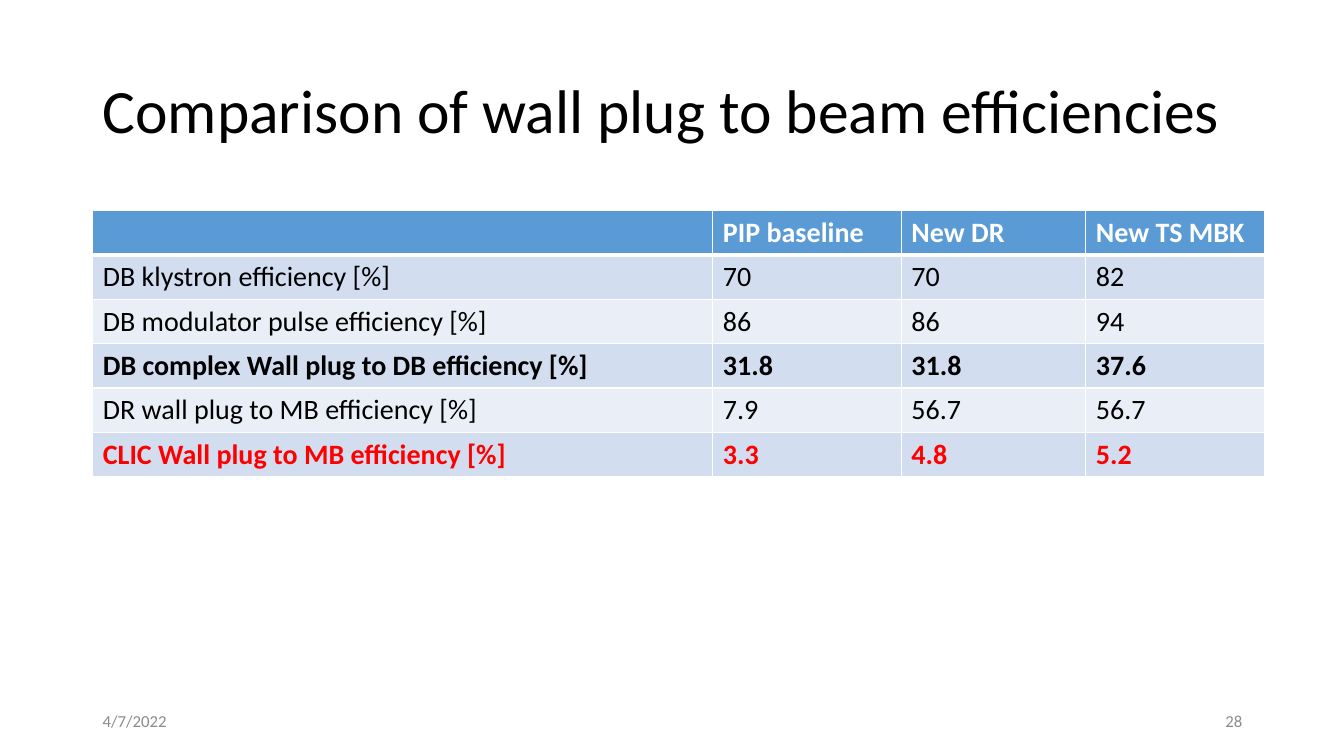
import pptx
import pptx.dml.color
import pptx.enum.text
import pptx.oxml
import pptx.oxml.ns
import pptx.util

COLOURS = {
    "black": "000000", "white": "FFFFFF", "red": "FF0000", "grey": "8C8C8C",
    "header": "5B9BD5", "band_dark": "D2DEEF", "band_light": "EAEFF7",
}
ALIGN = pptx.enum.text.PP_ALIGN
MIDDLE = pptx.enum.text.MSO_ANCHOR.MIDDLE


class SlideBuilder:
    """Holds the style and the current slide; lengths are px, 100 to the inch."""

    font = "Calibri"
    scale = 9144

    def __init__(self, page):
        self.page = page

    def emu(self, *lengths):
        return [pptx.util.Emu(length * self.scale) for length in lengths]

    def colour(self, name):
        return pptx.dml.color.RGBColor.from_string(COLOURS[name])

    def fill_text(self, frame, text, size, colour, bold=False, align=ALIGN.LEFT, spacing=1.0):
        para = frame.paragraphs[0]
        para.alignment, para.line_spacing = align, spacing
        span = para.add_run()
        span.text = text
        values = {"name": self.font, "size": pptx.util.Pt(size), "bold": bold}
        for name, value in values.items():
            setattr(span.font, name, value)
        span.font.color.rgb = self.colour(colour)

    def text(self, box, text, size, colour, **style):
        frame = self.page.shapes.add_textbox(*self.emu(*box)).text_frame
        frame.word_wrap = True
        frame.vertical_anchor = MIDDLE
        self.fill_text(frame, text, size, colour, **style)

    def borders(self, cell, widths):
        properties = cell._tc.get_or_add_tcPr()
        for position, (side, points) in enumerate(widths.items()):
            line = pptx.oxml.parse_xml(
                f'<a:ln{side} {pptx.oxml.ns.nsdecls("a")} w="{pptx.util.Pt(points)}">'
                f'<a:solidFill><a:srgbClr val="{COLOURS["white"]}"/></a:solidFill>'
                f'</a:ln{side}>')
            properties.insert(position, line)

    def table(self, left, top, column_widths, row_height, rows, row_styles):
        box = (left, top, sum(column_widths), row_height * len(rows))
        grid = self.page.shapes.add_table(
            len(rows), len(column_widths), *self.emu(*box)).table
        grid.horz_banding = False
        for column, width in zip(grid.columns, self.emu(*column_widths)):
            column.width = width
        for index, (values, style) in enumerate(zip(rows, row_styles)):
            fill, colour, bold = style
            # The rule under the header is thicker
            widths = {"L": 1, "R": 1, "T": 3 if index == 1 else 1, "B": 3 if index == 0 else 1}
            for cell, value in zip(grid.rows[index].cells, values):
                cell.fill.solid()
                cell.fill.fore_color.rgb = self.colour(fill)
                self.borders(cell, widths)
                self.fill_text(cell.text_frame, value, 20, colour, bold=bold)


def main():
    deck = pptx.Presentation()
    deck.slide_width, deck.slide_height = pptx.util.Inches(13.33), pptx.util.Inches(7.5)
    builder = SlideBuilder(deck.slides.add_slide(deck.slide_layouts[6]))

    # Title
    builder.text((92, 40, 1150, 145), "Comparison of wall plug to beam efficiencies",
                 44, "black", spacing=0.9)

    # Efficiency table
    rows = [
        ("", "PIP baseline", "New DR", "New TS MBK"),
        ("DB klystron efficiency [%]", "70", "70", "82"),
        ("DB modulator pulse efficiency [%]", "86", "86", "94"),
        ("DB complex Wall plug to DB efficiency [%]", "31.8", "31.8", "37.6"),
        ("DR wall plug to MB efficiency [%]", "7.9", "56.7", "56.7"),
        ("CLIC Wall plug to MB efficiency [%]", "3.3", "4.8", "5.2"),
    ]
    row_styles = [
        ("header", "white", True),
        ("band_dark", "black", False),
        ("band_light", "black", False),
        ("band_dark", "black", True),
        ("band_light", "black", False),
        ("band_dark", "red", True),
    ]
    builder.table(92, 209, (615, 187, 183, 177), 44, rows, row_styles)

    # Footer
    builder.text((92, 695, 300, 40), "4/7/2022", 12, "grey")
    builder.text((942, 695, 300, 40), "28", 12, "grey", align=ALIGN.RIGHT)

    deck.save("out.pptx")


if __name__ == "__main__":
    main()
